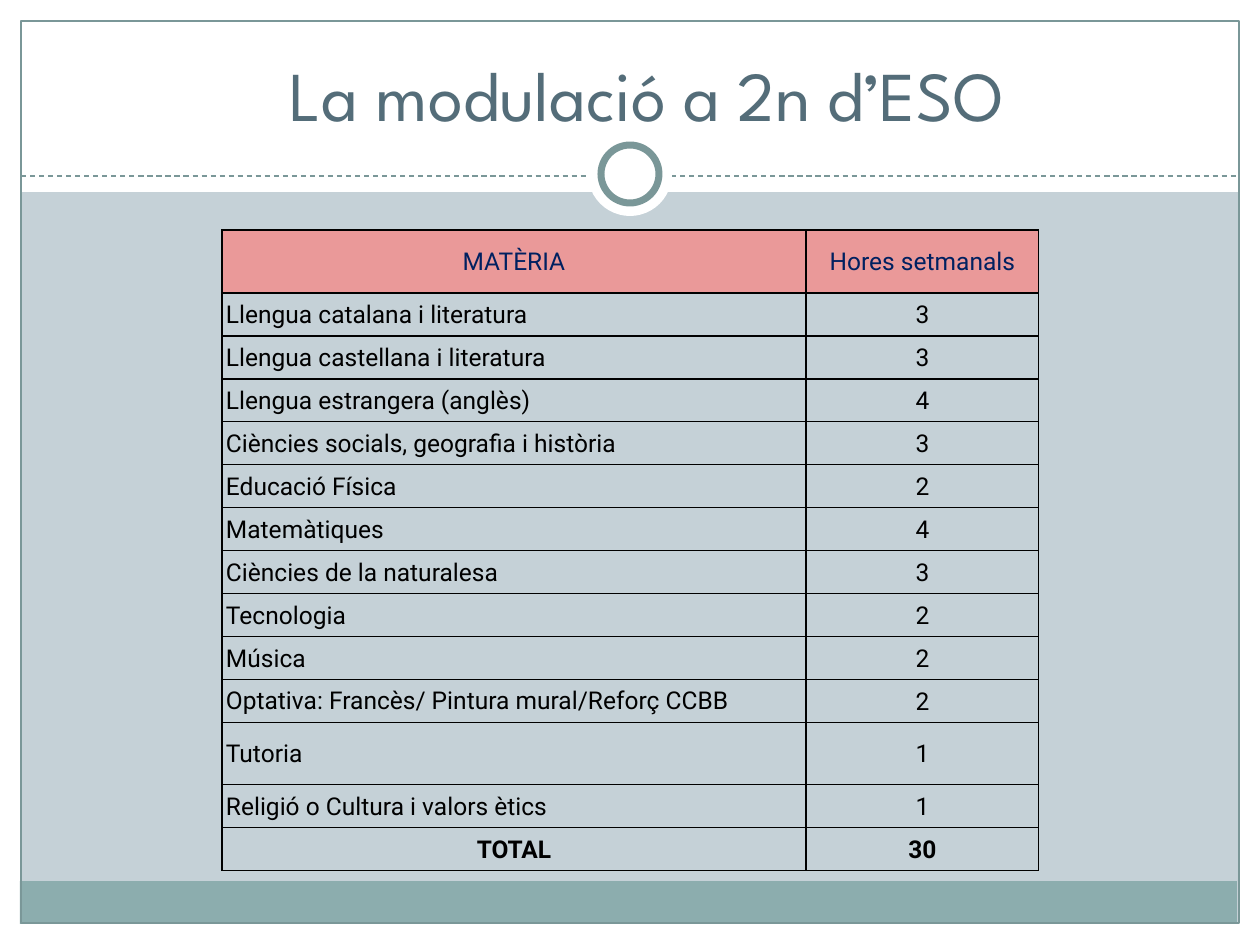
from dataclasses import dataclass
from typing import Any, Optional

import lxml.etree
import pptx
import pptx.dml.color
import pptx.enum.dml
import pptx.enum.shapes
import pptx.enum.text
import pptx.oxml.ns
import pptx.util

SHAPE = pptx.enum.shapes.MSO_SHAPE
ALIGN = pptx.enum.text.PP_ALIGN
ANCHOR = pptx.enum.text.MSO_ANCHOR
qn = pptx.oxml.ns.qn
SCALE = 914400 / 126  # EMU in one px


@dataclass(frozen=True)
class Theme:
    back: str = "C5D1D7"
    white: str = "FFFFFF"
    band: str = "8CADAE"
    edge: str = "7A9798"
    title: str = "546D79"
    head: str = "EA9999"
    navy: str = "002060"
    black: str = "000000"
    big: int = 40
    small: int = 14
    thin: float = 0.75
    ring: float = 4
    display: str = "League Spartan"
    text: str = "Roboto"


@dataclass(frozen=True)
class Box:
    left: int
    top: int
    width: int
    height: int
    fill: Optional[str] = None
    line: Optional[str] = None
    weight: float = 0.75
    kind: Any = SHAPE.RECTANGLE


@dataclass(frozen=True)
class Row:
    name: str
    hours: str
    height: int = 43
    align: Any = ALIGN.LEFT
    color: str = Theme.black
    fill: Optional[str] = None
    bold: bool = False
    space: float = 1.05


THEME = Theme()

BOXES = [
    Box(0, 924, 1260, 21, THEME.white),
    Box(0, 0, 1260, 192, THEME.white),
    Box(0, 0, 21, 945, THEME.white),
    Box(1239, 0, 21, 945, THEME.white),
    Box(20, 881, 1217, 43, THEME.band),
    Box(21, 21, 1218, 902, line=THEME.edge, weight=THEME.thin),
]
RING = [
    Box(588, 132, 84, 84, THEME.white, kind=SHAPE.OVAL),
    Box(601, 145, 58, 58, THEME.white, THEME.edge, THEME.ring, SHAPE.OVAL),
]
ROWS = [
    Row("MATÈRIA", "Hores setmanals", 63, ALIGN.CENTER, THEME.navy, THEME.head),
    Row("Llengua catalana i literatura", "3"),
    Row("Llengua castellana i literatura", "3"),
    Row("Llengua estrangera (anglès)", "4"),
    Row("Ciències socials, geografia i història", "3"),
    Row("Educació Física", "2"),
    Row("Matemàtiques", "4"),
    Row("Ciències de la naturalesa", "3"),
    Row("Tecnologia", "2"),
    Row("Música", "2"),
    Row("Optativa: Francès/ Pintura mural/Reforç CCBB", "2", space=1.0),
    Row("Tutoria", "1", 62),
    Row("Religió o Cultura i valors ètics", "1"),
    Row("TOTAL", "30", align=ALIGN.CENTER, bold=True),
]
COLS = [584, 233]


def px(num: int) -> int:
    return pptx.util.Emu(round(num * SCALE))


def rgb(code: str) -> pptx.dml.color.RGBColor:
    return pptx.dml.color.RGBColor.from_string(code)


def put(item: Any, form: dict) -> None:
    for name, value in form.items():
        setattr(item, name, value)


def paint(fill: Any, code: Optional[str]) -> None:
    if code:
        fill.solid()
        fill.fore_color.rgb = rgb(code)
    else:
        fill.background()


def draw_box(slide: Any, box: Box) -> None:
    area = map(px, (box.left, box.top, box.width, box.height))
    shape = slide.shapes.add_shape(box.kind, *area)
    shape.shadow.inherit = False
    paint(shape.fill, box.fill)
    paint(shape.line.fill, box.line)
    if box.line:
        shape.line.width = pptx.util.Pt(box.weight)


def draw_rule(slide: Any) -> None:
    kind = pptx.enum.shapes.MSO_CONNECTOR.STRAIGHT
    rule = slide.shapes.add_connector(kind, px(21), px(176), px(1239), px(176))
    rule.line.color.rgb = rgb(THEME.edge)
    put(rule.line, {"width": pptx.util.Pt(THEME.thin),
                    "dash_style": pptx.enum.dml.MSO_LINE.DASH})
    props = rule._element.spPr
    lxml.etree.SubElement(props, qn("a:effectLst"))


def write(para: Any, text: str, size: int, face: str, code: str,
          align: Any, bold: bool = False) -> None:
    para.alignment = align
    run = para.add_run()
    run.text = text
    put(run.font, {"size": pptx.util.Pt(size), "name": face, "bold": bold})
    run.font.color.rgb = rgb(code)


def draw_title(slide: Any) -> None:
    title = slide.shapes.title
    put(title, {"left": px(44), "top": px(37),
                "width": px(1125), "height": px(105)})
    put(title.text_frame, {
        "vertical_anchor": ANCHOR.BOTTOM, "word_wrap": True,
        "auto_size": pptx.enum.text.MSO_AUTO_SIZE.NONE})
    para = title.text_frame.paragraphs[0]
    write(para, " La modulació a 2n d’ESO", THEME.big, THEME.display,
          THEME.title, ALIGN.CENTER)
    put_indent = para._p.get_or_add_pPr().set
    put_indent("marL", "0")
    put_indent("indent", str(px(63)))
    slide.shapes._spTree.append(title._element)  # bring to front


def add_border(cell: Any) -> None:
    props = cell._tc.get_or_add_tcPr()
    for side in ("a:lnL", "a:lnR", "a:lnT", "a:lnB"):
        line = lxml.etree.SubElement(props, qn(side))
        line.set("w", str(pptx.util.Pt(THEME.thin)))
        fill = lxml.etree.SubElement(line, qn("a:solidFill"))
        lxml.etree.SubElement(fill, qn("a:srgbClr")).set("val", THEME.black)


def draw_table(slide: Any) -> None:
    high = sum(row.height for row in ROWS)
    table = slide.shapes.add_table(len(ROWS), len(COLS), px(222), px(230),
                                   px(sum(COLS)), px(high)).table
    put(table, {"first_row": False, "horz_banding": False})
    for col, width in zip(table.columns, COLS):
        col.width = px(width)
    for line, row in zip(table.rows, ROWS):
        line.height = px(row.height)
        parts = ((row.name, row.align, row.space),
                 (row.hours, ALIGN.CENTER, 1.05))
        for cell, (text, align, space) in zip(line.cells, parts):
            put(cell, {"margin_left": px(4), "margin_right": px(4),
                       "margin_top": 0, "margin_bottom": 0,
                       "vertical_anchor": ANCHOR.MIDDLE})
            add_border(cell)
            paint(cell.fill, row.fill)
            para = cell.text_frame.paragraphs[0]
            para.line_spacing = space
            write(para, text, THEME.small, THEME.text, row.color, align, row.bold)


def main() -> None:
    deck = pptx.Presentation()
    put(deck, {"slide_width": px(1260), "slide_height": px(945)})
    slide = deck.slides.add_slide(deck.slide_layouts[5])
    paint(slide.background.fill, THEME.back)
    for box in BOXES:
        draw_box(slide, box)
    draw_rule(slide)
    for box in RING:
        draw_box(slide, box)
    draw_title(slide)
    draw_table(slide)
    deck.save("out.pptx")


if __name__ == "__main__":
    main()
